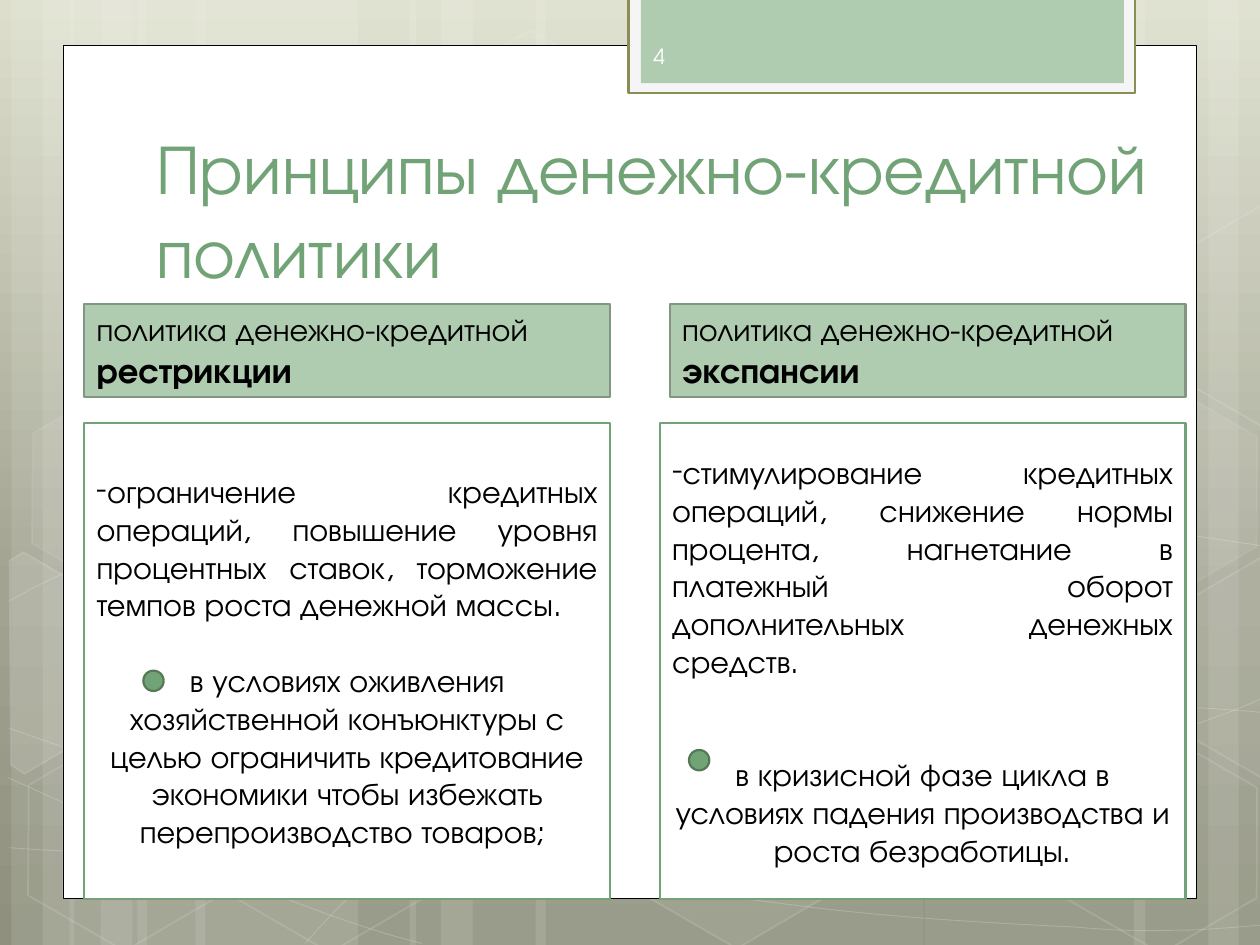
from copy import deepcopy
from lxml.etree import SubElement
from pptx import Presentation
from pptx.dml.color import RGBColor
from pptx.enum.shapes import MSO_SHAPE
from pptx.enum.text import MSO_ANCHOR, MSO_AUTO_SIZE, PP_ALIGN
from pptx.oxml.ns import qn
from pptx.util import Cm, Pt

WHITE = RGBColor(0xFF, 0xFF, 0xFF)
BLACK = RGBColor(0x00, 0x00, 0x00)
OFF_WHITE = RGBColor(0xFE, 0xFE, 0xFE)
PALE = RGBColor(0xF5, 0xF5, 0xF5)
OLIVE = RGBColor(0x8A, 0x8E, 0x56)
SAGE = RGBColor(0xB0, 0xCC, 0xB0)
SAGE_EDGE = RGBColor(0x82, 0x97, 0x82)
GREEN = RGBColor(0x72, 0xA3, 0x76)
GREEN_EDGE = RGBColor(0x54, 0x79, 0x57)
SKY = [(0, RGBColor(0xDD, 0xDF, 0xCC)), (0.62, RGBColor(0xA2, 0xA3, 0x91)),
       (1, RGBColor(0x8F, 0x91, 0x7E))]
FONT = "TeX Gyre Adventor"


def paint(sp, fill=None, line=None, width=1.25, fill_alpha=100, line_alpha=100):
    sp.shadow.inherit = False
    for fmt, color, alpha in ((sp.fill, fill, fill_alpha), (sp.line.fill, line, line_alpha)):
        if color is None:
            fmt.background()
            continue
        fmt.solid()
        fmt.fore_color.rgb = color
        if alpha < 100:
            clr = list(sp._element.spPr.iter(qn("a:srgbClr")))[-1]
            SubElement(clr, qn("a:alpha"), val=str(alpha * 1000))
    if line is not None:
        sp.line.width = Pt(width)


def add_run(p, text, size, color=BLACK, bold=False):
    r = p.add_run()
    r.text = text
    for name, value in {"name": FONT, "size": Pt(size), "bold": bold}.items():
        setattr(r.font, name, value)
    r.font.color.rgb = color


prs = Presentation()
prs.slide_width, prs.slide_height = Cm(25.4), Cm(19.05)
s = prs.slides.add_slide(prs.slide_layouts[5])
shapes = s.shapes

bg = s.background.fill
bg.gradient()
bg.gradient_angle = 270
stops = bg.gradient_stops[0]._gs.getparent()
stops.append(deepcopy(stops[-1]))
for stop, (position, color) in zip(bg.gradient_stops, SKY):
    stop.position = position
    stop.color.rgb = color

backdrop = shapes.add_group_shape().shapes
strips = [(2.77, 4.45, 0), (0.23, 1.27, 0), (0.86, 2.11, 0), (3.94, 4.45, 0), (1.4, 1.27, 0),
          (2.03, 2.11, 0), (18.64, 4.45, 180), (24.36, 1.27, 180), (22.86, 2.11, 180),
          (10.8, 7.82, 0), (8.26, 1.27, 0), (8.89, 2.11, 0)]
for x, w, angle in strips:
    sp = backdrop.add_shape(MSO_SHAPE.RECTANGLE, Cm(x), 0, Cm(w), prs.slide_height)
    sp.rotation = angle
    paint(sp, WHITE, fill_alpha=10)

curves = [
    [(0.18, 17.09), (1.37, 17.17), (2.92, 17.25), (4.83, 17.22), (6.73, 17.2), (9.09, 17.15),
     (11.63, 16.89), (14.17, 16.64), (17.78, 16.15), (20.12, 15.67), (22.43, 15.19),
     (24.82, 14.43), (25.58, 14)],
    [(0.18, 12.12), (0.91, 11.71), (1.65, 11.33), (3.07, 10.95), (4.52, 10.57), (6.58, 10.01),
     (8.81, 9.83), (11.07, 9.65), (13.82, 9.63), (16.61, 9.83), (19.41, 10.03),
     (24.05, 10.82), (25.58, 11.02)],
    [(0.15, 15.67), (3.23, 17.07), (6.27, 18.47), (8.51, 19.02)],
    [(0.18, 14.68), (0.97, 14.96), (1.78, 15.24), (3.25, 15.65), (4.72, 16.03), (6.93, 16.66),
     (9.07, 17.09), (11.18, 17.53), (13.84, 17.98), (15.95, 18.24), (18.06, 18.52),
     (20.32, 18.62), (21.67, 18.69), (23.01, 18.8), (23.34, 18.75), (24, 18.75),
     (24.66, 18.72), (25.12, 18.67), (25.58, 18.64)],
    [(6.15, 19.02), (6.6, 18.52), (7.06, 18.01), (7.67, 17.55), (8.28, 17.07), (9.14, 16.59),
     (9.86, 16.23), (10.57, 15.88), (11, 15.72), (11.91, 15.47), (12.85, 15.21),
     (14.55, 14.86), (15.44, 14.68), (16.36, 14.5), (16.48, 14.5), (17.27, 14.45),
     (18.06, 14.38), (19.3, 14.27), (20.17, 14.27), (21.06, 14.25), (22.5, 14.27),
     (22.5, 14.27), (22.5, 14.27), (24.21, 14.27), (24.21, 14.27), (24.66, 14.3),
     (25.1, 14.33), (25.32, 14.35), (25.55, 14.38), (25.48, 14.35), (25.55, 14.38)],
]
for knots in curves:
    points = [(Cm(x), Cm(y)) for x, y in knots]
    fb = backdrop.build_freeform(*points[0])
    fb.add_line_segments(points[1:], close=False)
    sp = fb.convert_to_shape()
    outline = next(sp._element.iter(qn("a:path")))
    segments = outline.findall(qn("a:lnTo"))
    for i in range(0, len(segments), 3):
        bezier = SubElement(outline, qn("a:cubicBezTo"))
        for segment in segments[i:i + 3]:
            bezier.append(segment[0])
            outline.remove(segment)
    paint(sp, line=WHITE, width=0.5, line_alpha=20)

hexagons = [(8.48, 0.91, 4, 8), (12.62, 14.96, 6, 12), (0.28, 15.01, 0, 12), (0.36, 7.92, 7, 8),
            (4.42, 15.04, 0, 12), (19.13, 11.51, 10, 12), (21.18, 15.06, 0, 12),
            (21.18, 7.98, 7, 8)]
for x, y, fill_alpha, line_alpha in hexagons:
    sp = backdrop.add_shape(MSO_SHAPE.HEXAGON, Cm(x), Cm(y), Cm(4.45), Cm(3.86))
    sp.adjustments[0] = 0.285
    sp.rotation = 30
    paint(sp, WHITE if fill_alpha else None, WHITE, 1, fill_alpha, line_alpha)

left_cut = [(-1.77, -1.65), (-1.62, -1.94), (0.65, -1.93), (1.73, 0), (0.64, 1.92), (0.31, 1.9)]
right_cut = [(-1.73, 0), (-0.63, -1.93), (-0.42, -1.93), (1.72, 1.74), (1.6, 1.93),
             (-0.63, 1.93)]
cut_hexagons = [(0.91, 13.61, left_cut, 10), (25.02, 13.21, right_cut, 4),
                (25.02, 6.12, right_cut, 0)]
for x, y, offsets, fill_alpha in cut_hexagons:
    corners = [(Cm(x + dx), Cm(y + dy)) for dx, dy in offsets]
    fb = backdrop.build_freeform(*corners[0])
    fb.add_line_segments(corners[1:])
    sp = fb.convert_to_shape()
    sp.rotation = 30
    paint(sp, WHITE if fill_alpha else None, WHITE, 1, fill_alpha, 12)

frames = [(1.27, 0.91, 22.86, 17.2, WHITE, BLACK, 0.5),
          (12.67, -0.05, 10.22, 1.93, PALE, OLIVE, 1.25),
          (12.92, -0.05, 9.74, 1.73, SAGE, None, 0)]
for x, y, w, h, fill, line, width in frames:
    sp = shapes.add_shape(MSO_SHAPE.RECTANGLE, Cm(x), Cm(y), Cm(w), Cm(h))
    paint(sp, fill, line, width)

title = shapes.title
shapes._spTree.append(title._element)
for name, value in {"left": Cm(2.9), "top": Cm(2.84), "width": Cm(20.8),
                    "height": Cm(3.18)}.items():
    setattr(title, name, value)
tf = title.text_frame
for name, value in {"vertical_anchor": MSO_ANCHOR.BOTTOM, "word_wrap": True,
                    "auto_size": MSO_AUTO_SIZE.NONE}.items():
    setattr(tf, name, value)
p = tf.paragraphs[0]
p.alignment = PP_ALIGN.LEFT
add_run(p, "Принципы денежно-кредитной политики", 40, GREEN)

policies = [
    (1.7, 1.7, 10.6, "рестрикции", 21.6, (2.89, 13.52),
     "ограничение кредитных операций, повышение уровня процентных ставок, "
     "торможение темпов роста денежной массы.",
     "в условиях оживления хозяйственной конъюнктуры с целью ограничить кредитование "
     "экономики чтобы избежать перепроизводство товаров; "),
    (13.3, 13.5, 10.4, "экспансии", 43.2, (13.89, 15.12),
     "стимулирование кредитных операций, снижение нормы процента, нагнетание в платежный "
     "оборот дополнительных денежных средств. ",
     "в кризисной фазе цикла в условиях падения производства и роста безработицы."),
]
for x, head_x, head_w, kind, gap, dot, measures, conditions in policies:
    sp = shapes.add_shape(MSO_SHAPE.RECTANGLE, Cm(head_x), Cm(6.13), Cm(head_w), Cm(1.88))
    paint(sp, SAGE, SAGE_EDGE)
    tf = sp.text_frame
    tf.vertical_anchor = MSO_ANCHOR.TOP
    p = tf.paragraphs[0]
    p.alignment = PP_ALIGN.LEFT
    add_run(p, "политика денежно-кредитной ", 18)
    add_run(p, kind, 20, bold=True)

    sp = shapes.add_shape(MSO_SHAPE.RECTANGLE, Cm(x), Cm(8.53), Cm(10.6), Cm(9.59))
    paint(sp, WHITE, GREEN)
    tf = sp.text_frame
    tf.vertical_anchor = MSO_ANCHOR.MIDDLE
    p = tf.paragraphs[0]
    p.alignment = PP_ALIGN.JUSTIFY
    pPr = p._p.get_or_add_pPr()
    SubElement(pPr, qn("a:buFont"), typeface=FONT)
    SubElement(pPr, qn("a:buChar"), char="-")
    add_run(p, measures, 18)
    p = tf.add_paragraph()
    p.alignment = PP_ALIGN.CENTER
    p.space_before = Pt(gap)
    add_run(p, conditions, 18)

    sp = shapes.add_shape(MSO_SHAPE.OVAL, Cm(dot[0]), Cm(dot[1]), Cm(0.41), Cm(0.41))
    paint(sp, GREEN, GREEN_EDGE)

sp = shapes.add_textbox(Cm(12.92), Cm(0.63), Cm(3.71), Cm(1.02))
tf = sp.text_frame
tf.word_wrap = True
tf.vertical_anchor = MSO_ANCHOR.MIDDLE
add_run(tf.paragraphs[0], "4", 12, OFF_WHITE)

prs.save("out.pptx")
